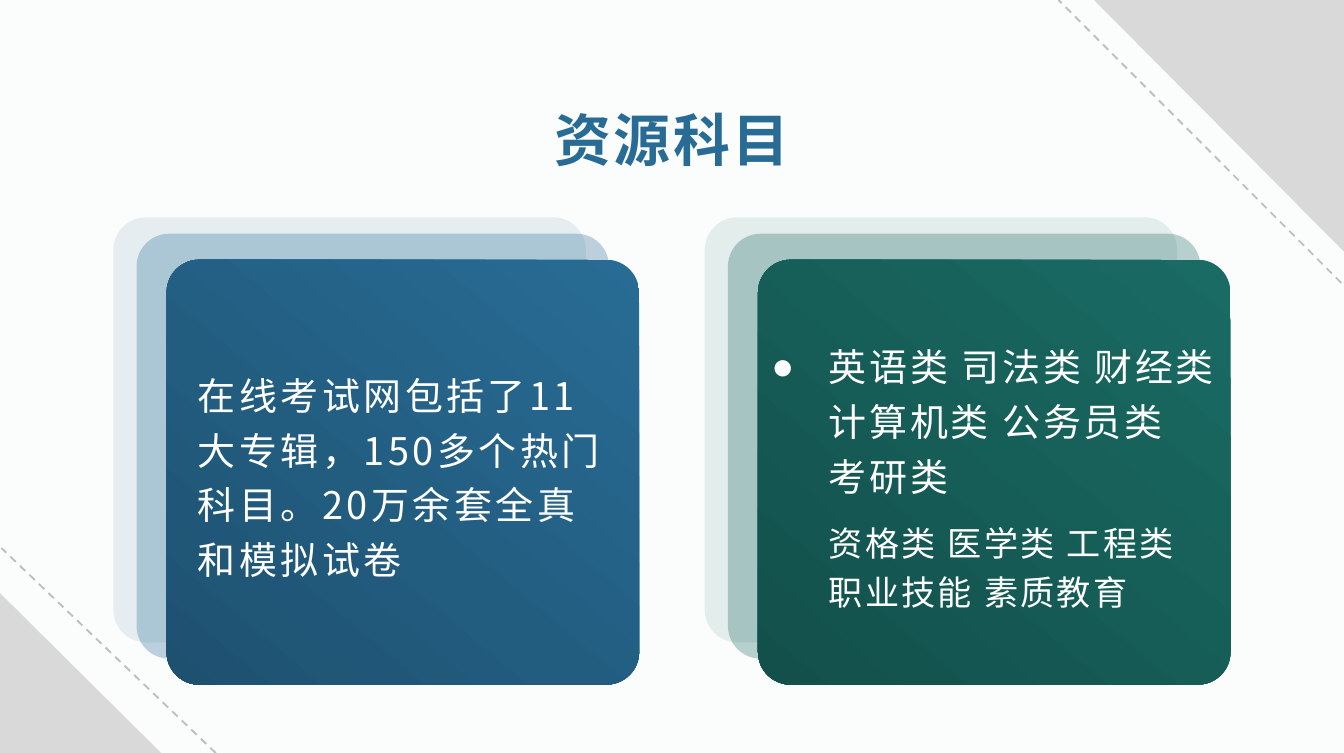
from lxml.etree import SubElement
from pptx import Presentation
from pptx.dml.color import RGBColor
from pptx.enum.dml import MSO_LINE
from pptx.enum.shapes import MSO_CONNECTOR, MSO_SHAPE
from pptx.enum.text import MSO_ANCHOR, MSO_AUTO_SIZE, PP_ALIGN
from pptx.oxml.ns import qn
from pptx.util import Inches, Pt

WIDTH, HEIGHT = 9.84, 5.51
FONT = "Noto Sans CJK SC"
COLORS = {
    "background": "FBFCFC", "corner": "D9D9D9", "dash": "BFBFBF", "text": "FFFFFF",
    "blue": "286C95", "dark blue": "1E5170",
    "green": "196B64", "dark green": "13504B",
}


def color(name):
    return RGBColor.from_string(COLORS[name])


def inches(*values):
    return [Inches(value) for value in values]


def fill_plain(shape, name, opacity=100):
    shape.shadow.inherit = False
    shape.line.fill.background()
    shape.fill.solid()
    shape.fill.fore_color.rgb = color(name)
    if opacity < 100:
        tint = shape.fill._xPr.find(qn("a:solidFill"))[0]
        SubElement(tint, qn("a:alpha"), val=str(opacity * 1000))


def format_runs(paragraph, size, color_name, spacing, bold=False):
    for run in paragraph.runs:
        run.font.size = Pt(size)
        run.font.bold = bold
        run.font.color.rgb = color(color_name)
        run.font.name = FONT
        properties = run._r.get_or_add_rPr()
        properties.set("spc", str(round(spacing * 100)))
        SubElement(properties, qn("a:ea"), typeface=FONT)


def add_dashed_line(slide, start, end):
    line = slide.shapes.add_connector(MSO_CONNECTOR.STRAIGHT, *inches(*start, *end))
    line.line.color.rgb = color("dash")
    line.line.width = Pt(1)
    line.line.dash_style = MSO_LINE.DASH
    SubElement(line._element.spPr, qn("a:effectLst"))


def add_corners(slide):
    # Top right
    add_dashed_line(slide, (9.82, 2.07), (7.75, 0))
    outline = slide.shapes.build_freeform(*inches(8.01, 0))
    outline.add_line_segments([inches(WIDTH, 0), inches(WIDTH, 1.84)], close=True)
    fill_plain(outline.convert_to_shape(), "corner")
    # Bottom left
    triangle = slide.shapes.add_shape(
        MSO_SHAPE.RIGHT_TRIANGLE, *inches(0, HEIGHT - 1.17, 1.18, 1.17))
    fill_plain(triangle, "corner")
    add_dashed_line(slide, (1.58, HEIGHT), (0.01, 4.01))


def add_title(slide, text, left, top, width, height):
    title = slide.shapes.title
    title.left, title.top, title.width, title.height = inches(left, top, width, height)
    frame = title.text_frame
    frame.text = text
    frame.auto_size = MSO_AUTO_SIZE.NONE
    frame.vertical_anchor = MSO_ANCHOR.TOP
    frame.margin_left = frame.margin_right = Inches(0.05)
    frame.margin_top = frame.margin_bottom = Inches(0.02)
    paragraph = frame.paragraphs[0]
    paragraph.alignment = PP_ALIGN.CENTER
    paragraph.line_spacing = 0.9
    format_runs(paragraph, 30, "blue", 1.4, bold=True)


def add_stacked_card(slide, left, top, hue):
    """Two translucent cards behind a card with a gradient."""
    for dx, dy, opacity in [(0, 0, 10), (0.17, 0.12, 30), (0.39, 0.31, 100)]:
        card = slide.shapes.add_shape(
            MSO_SHAPE.ROUNDED_RECTANGLE, *inches(left + dx, top + dy, 3.46, 3.11))
        card.adjustments[0] = 0.077
        fill_plain(card, hue, opacity)
    card.fill.gradient()
    card.fill.gradient_angle = 230
    for stop, name in zip(card.fill.gradient_stops, (hue, "dark " + hue)):
        stop.color.rgb = color(name)


def add_card_text(slide, left, top, width, height, items):
    """Each item holds text, size, letter spacing, level, left margin and bullet."""
    frame = slide.shapes.add_textbox(*inches(left, top, width, height)).text_frame
    frame.word_wrap = True
    frame.vertical_anchor = MSO_ANCHOR.MIDDLE
    frame.text = "\n".join(item[0] for item in items)
    for paragraph, item in zip(frame.paragraphs, items):
        _, size, spacing, level, margin, bullet = item
        properties = paragraph._p.get_or_add_pPr()
        properties.set("marL", str(Inches(margin)))
        properties.set("indent", str(-Inches(margin) if bullet else 0))
        if bullet:
            SubElement(properties, qn("a:buFont"), typeface="Arial")
            SubElement(properties, qn("a:buChar"), char=bullet)
        paragraph.level = level
        paragraph.alignment = PP_ALIGN.LEFT
        paragraph.line_spacing = 1.2
        paragraph.space_after = Pt(8)
        format_runs(paragraph, size, "text", spacing)


def main():
    presentation = Presentation()
    presentation.slide_width, presentation.slide_height = inches(WIDTH, HEIGHT)
    slide = presentation.slides.add_slide(presentation.slide_layouts[5])
    slide.background.fill.solid()
    slide.background.fill.fore_color.rgb = color("background")

    add_corners(slide)
    add_title(slide, "资源科目", 0.49, 0.8, 8.86, 0.61)

    # Left card: overview
    add_stacked_card(slide, 0.83, 1.59, "blue")
    add_card_text(slide, 1.35, 2.1, 3.21, 2.72, [
        ("在线考试网包括了11大专辑，150多个热门科目。20万余套全真和模拟试卷",
         20, 1.8, 0, 0, None),
    ])

    # Right card: subject categories, with a line break before the last one
    add_stacked_card(slide, 5.16, 1.59, "green")
    add_card_text(slide, 5.55, 2.1, 3.47, 2.73, [
        ("英语类 司法类 财经类 计算机类 公务员类\v考研类", 20, 1.4, 0, 0.42, "●"),
        ("资格类 医学类 工程类 职业技能 素质教育", 18, 1.2, 1, 0.42, None),
    ])

    presentation.save("out.pptx")


if __name__ == "__main__":
    main()
